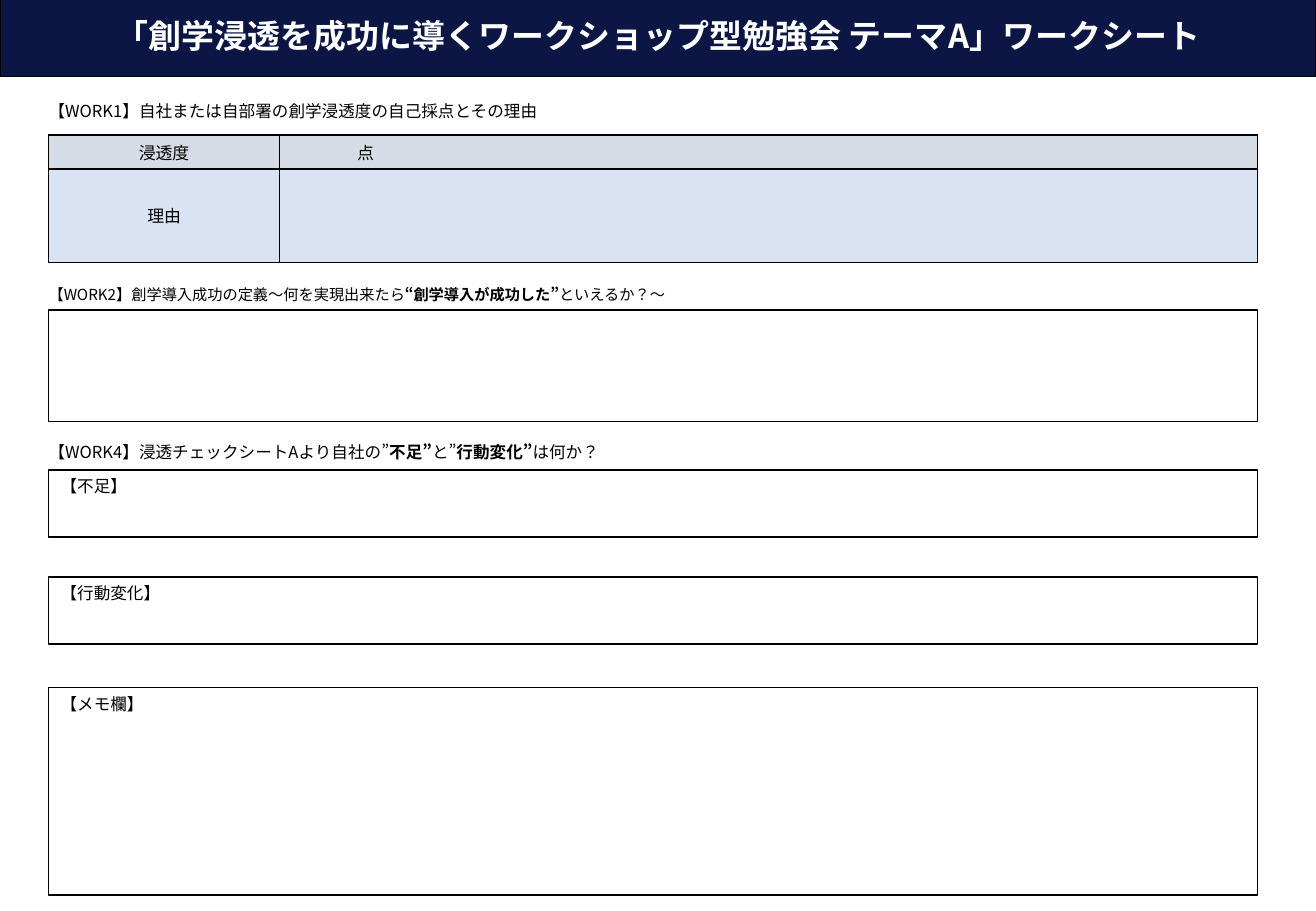
from lxml import etree
from pptx import Presentation
from pptx.dml.color import RGBColor
from pptx.enum.lang import MSO_LANGUAGE_ID
from pptx.enum.shapes import MSO_SHAPE
from pptx.enum.text import MSO_ANCHOR, PP_ALIGN
from pptx.oxml import parse_xml
from pptx.oxml.ns import nsdecls, qn
from pptx.util import Inches, Pt

COLORS = {
    "navy": "0B1644",
    "white": "FFFFFF",
    "black": "000000",
    "gray": "D6DCE5",
    "blue": "DAE3F3",
}
FONT = "Noto Sans CJK JP"
LEFT, WIDTH = 0.4, 9.95


def write_text(frame, parts, size=9.8, color="black", bold=False, align=PP_ALIGN.LEFT,
               anchor=MSO_ANCHOR.TOP, spacing=1.0):
    frame.word_wrap = True
    frame.vertical_anchor = anchor
    paragraph = frame.paragraphs[0]
    paragraph.alignment = align
    paragraph.line_spacing = spacing
    for index, part in enumerate(parts):
        run = paragraph.add_run()
        run.text = part
        run.font.name = FONT
        run.font.size = Pt(size)
        run.font.bold = bold or index % 2 == 1
        run.font.language_id = MSO_LANGUAGE_ID.JAPANESE
        run.font.color.rgb = RGBColor.from_string(COLORS[color])
        east_asian = etree.SubElement(run.font._element, qn("a:ea"))
        east_asian.set("typeface", FONT)


def add_box(left, top, width, height, fill):
    shape = slide.shapes.add_shape(
        MSO_SHAPE.RECTANGLE, Inches(left), Inches(top), Inches(width), Inches(height))
    shape.shadow.inherit = False
    shape.fill.solid()
    shape.fill.fore_color.rgb = RGBColor.from_string(COLORS[fill])
    shape.line.color.rgb = RGBColor.from_string(COLORS["black"])
    shape.line.width = Pt(1)
    return shape


presentation = Presentation()
presentation.slide_width = Inches(10.83)
presentation.slide_height = Inches(7.5)
slide = presentation.slides.add_slide(presentation.slide_layouts[6])

title = add_box(0, -0.01, 10.83, 0.64, "navy")
write_text(title.text_frame, ["「創学浸透を成功に導くワークショップ型勉強会 テーマA」ワークシート"],
           size=19.5, color="white", bold=True, align=PP_ALIGN.CENTER,
           anchor=MSO_ANCHOR.MIDDLE, spacing=0.9)

headings = [
    (0.81, 9.8, ["【WORK1】自社または自部署の創学浸透度の自己採点とその理由"]),
    (2.33, 9, ["【WORK2】創学導入成功の定義～何を実現出来たら", "“創学導入が成功した”", "といえるか？～"]),
    (3.62, 9.8, ["【WORK4】浸透チェックシートAより自社の”", "不足”", "と”", "行動変化”", "は何か？"]),
]
for top, size, parts in headings:
    heading = slide.shapes.add_textbox(Inches(0.32), Inches(top), Inches(6.5), Inches(0.26))
    frame = heading.text_frame
    frame.margin_left = frame.margin_right = Inches(0.08)
    frame.margin_top = frame.margin_bottom = Inches(0.04)
    write_text(frame, parts, size=size, spacing=0.9)

table = slide.shapes.add_table(
    2, 2, Inches(LEFT), Inches(1.11), Inches(WIDTH), Inches(1.05)).table
for column, width in zip(table.columns, (1.9, 8.05)):
    column.width = Inches(width)
for row, height in zip(table.rows, (0.28, 0.77)):
    row.height = Inches(height)

score_rows = [("浸透度", "点", "gray"), ("理由", "", "blue")]
for row_index, (label, answer, fill) in enumerate(score_rows):
    for column_index, text in enumerate((label, answer)):
        cell = table.cell(row_index, column_index)
        cell.margin_left = Inches(0.64 if column_index else 0.08)
        cell.margin_right = Inches(0.08)
        cell.margin_top = cell.margin_bottom = Inches(0.04)
        write_text(cell.text_frame, [text] if text else [], size=10,
                   align=PP_ALIGN.LEFT if column_index else PP_ALIGN.CENTER)
        cell.vertical_anchor = MSO_ANCHOR.TOP if column_index else MSO_ANCHOR.MIDDLE
        properties = cell._tc.get_or_add_tcPr()
        for side in ("lnL", "lnR", "lnT", "lnB"):
            properties.append(parse_xml(
                f'<a:{side} {nsdecls("a")} w="{Pt(1)}"><a:solidFill>'
                f'<a:srgbClr val="{COLORS["black"]}"/></a:solidFill></a:{side}>'))
        cell.fill.solid()
        cell.fill.fore_color.rgb = RGBColor.from_string(COLORS[fill])

answer_boxes = [
    (2.55, 0.92, ""),
    (3.87, 0.55, "【不足】"),
    (4.75, 0.55, "【行動変化】"),
    (5.66, 1.71, "【メモ欄】"),
]
for top, height, label in answer_boxes:
    box = add_box(LEFT, top, WIDTH, height, "white")
    if label:
        write_text(box.text_frame, [label])

presentation.save("out.pptx")
